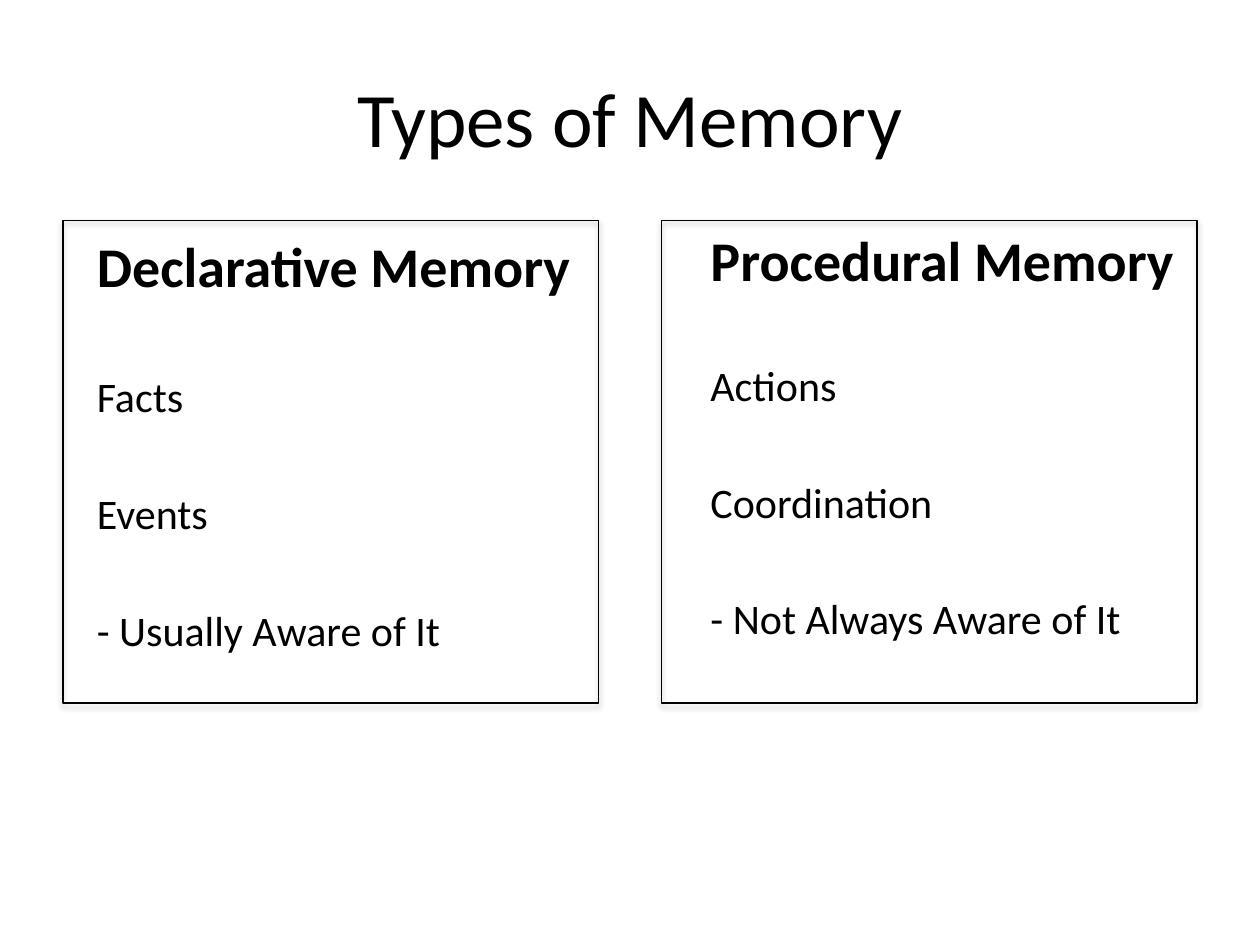
import pptx
import pptx.util
import pptx.dml.color
import pptx.enum.shapes
import pptx.enum.text
import pptx.oxml
import pptx.oxml.ns

Inches, Pt = pptx.util.Inches, pptx.util.Pt
ANCHOR = pptx.enum.text.MSO_ANCHOR
ALIGN = pptx.enum.text.PP_ALIGN
COLORS = {"text": "000000", "line": "000000", "shadow": "000000"}

prs = pptx.Presentation()
prs.slide_width, prs.slide_height = Inches(10), Inches(7.5)
s = prs.slides.add_slide(prs.slide_layouts[6])


def add_text(text, left, top, width, height, size, bold=False, align=ALIGN.LEFT,
             anchor=ANCHOR.TOP, inset_top=0.05, gap=0):
    sp = s.shapes.add_textbox(Inches(left), Inches(top), Inches(width), Inches(height))
    tf = sp.text_frame
    tf.word_wrap = True
    tf.vertical_anchor = anchor
    tf.margin_top = Inches(inset_top)
    tf.text = text
    for p in tf.paragraphs:
        p.alignment = align
        p.space_after = Pt(gap)
        r = p.runs[0]
        r.font.name = "Calibri"
        r.font.size = Pt(size)
        r.font.bold = bold
        r.font.color.rgb = pptx.dml.color.RGBColor.from_string(COLORS["text"])


add_text("Types of Memory", 0.5, 0.3, 9, 1.25, size=44, align=ALIGN.CENTER,
         anchor=ANCHOR.MIDDLE)

columns = [
    (0.67, 1.72, 2.42, "Declarative Memory", ["Facts", "Events", "- Usually Aware of It"]),
    (5.54, 1.67, 2.33, "Procedural Memory", ["Actions", "Coordination", "- Not Always Aware of It"]),
]
for left, heading_top, body_top, heading, items in columns:
    add_text(heading, left, heading_top, 4.42, 0.7, size=32, bold=True, anchor=ANCHOR.BOTTOM)
    add_text("\n".join(items), left, body_top, 4.42, 4.32, size=24, inset_top=0.52, gap=38)

for left in (0.5, 5.25):
    sp = s.shapes.add_shape(pptx.enum.shapes.MSO_SHAPE.RECTANGLE,
                            Inches(left), Inches(1.75), Inches(4.25), Inches(3.83))
    sp.fill.background()
    sp.line.color.rgb = pptx.dml.color.RGBColor.from_string(COLORS["line"])
    sp.line.width = Pt(0.75)
    sp.shadow.inherit = False
    effects = sp._element.spPr.find(pptx.oxml.ns.qn("a:effectLst"))
    effects.append(pptx.oxml.parse_xml(
        f'<a:outerShdw {pptx.oxml.ns.nsdecls("a")} blurRad="{Pt(3.1)}" dist="{Pt(1.8)}" '
        f'dir="5400000" rotWithShape="0"><a:srgbClr val="{COLORS["shadow"]}">'
        '<a:alpha val="35000"/></a:srgbClr></a:outerShdw>'))

prs.save("out.pptx")
